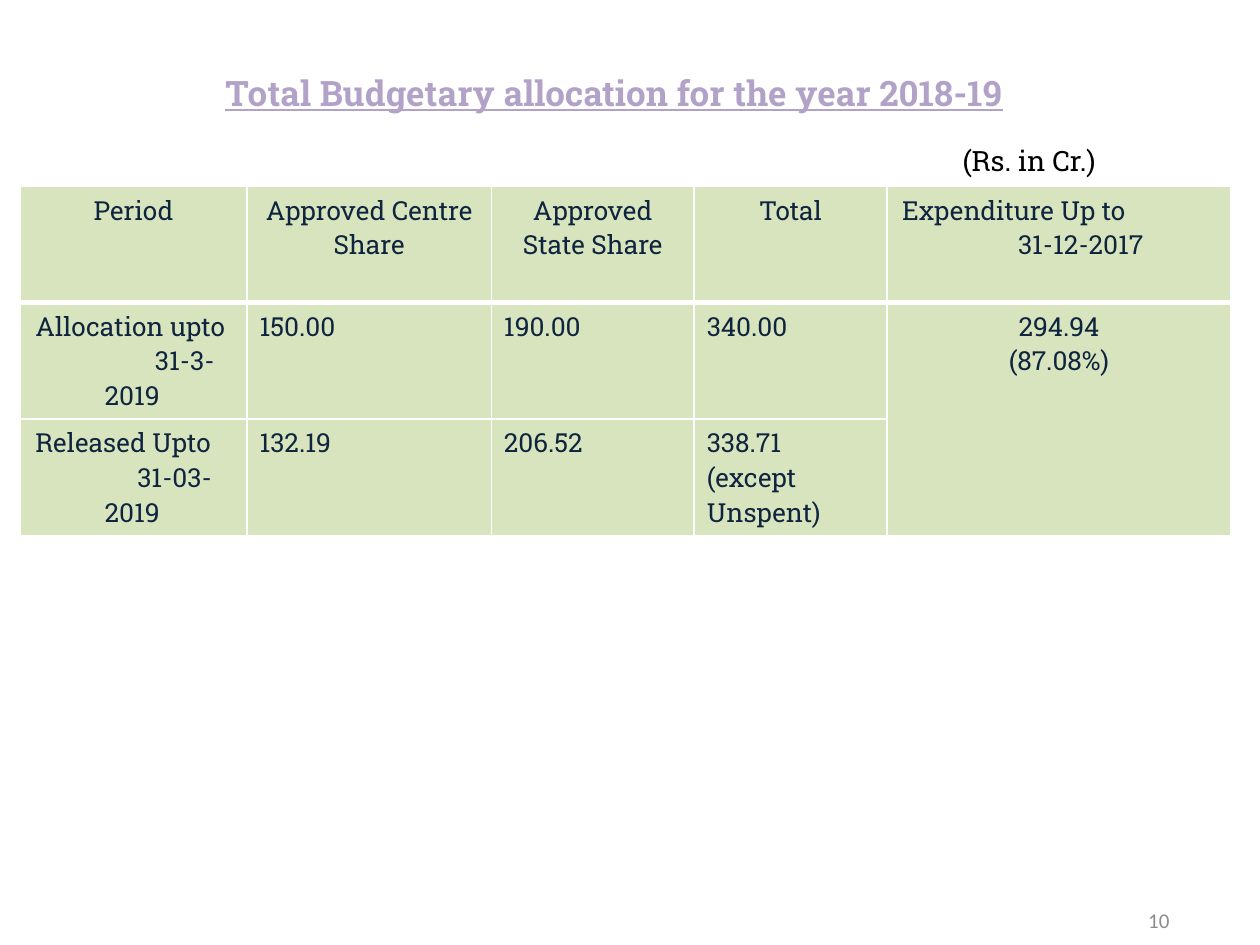
"""Build the budgetary allocation slide."""
from lxml import etree
from pptx import Presentation
from pptx import util as u
from pptx.dml.color import RGBColor
from pptx.enum import text
from pptx.oxml import ns

LILAC = RGBColor(0xB3, 0xA2, 0xC7)
GREEN = RGBColor(0xD7, 0xE4, 0xBD)
NAVY = RGBColor(0x0F, 0x24, 0x3E)
GREY = RGBColor(0x8C, 0x8C, 0x8C)
BLACK = RGBColor(0, 0, 0)
WHITE = RGBColor(0xFF, 0xFF, 0xFF)
SLAB = "Roboto Slab"
LEFT, CENTER, RIGHT = text.PP_ALIGN.LEFT, text.PP_ALIGN.CENTER, text.PP_ALIGN.RIGHT

TITLE = "Total Budgetary allocation for the year 2018-19"
UNIT = "(Rs. in Cr.)"
PAGE_NUMBER = "10"
COLUMNS = (1.8, 1.94, 1.61, 1.53, 2.73)
ROWS = (0.92, 0.92, 0.92)
CELLS = [
    [[("Period", CENTER)], [("Approved Centre Share", CENTER)],
     [("Approved State Share", CENTER)], [("Total", CENTER)],
     [("Expenditure Up to", LEFT, 0.02), ("31-12-2017", LEFT, 0.94)]],
    [[("Allocation upto", LEFT, 0.02), ("31-3-2019", LEFT, 0.57, 0.4)],
     [("150.00", LEFT)], [("190.00", LEFT)], [("340.00", LEFT)],
     [("294.94", CENTER), ("(87.08%)", CENTER)]],
    [[("Released Upto", LEFT, 0.02), ("31-03-2019", LEFT, 0.57, 0.26)],
     [("132.19", LEFT)], [("206.52", LEFT)], [("338.71 (except Unspent)", LEFT)]],
]


def write(para, words, size=15, color=NAVY, font=SLAB, align=LEFT,
          margin=0, indent=0, bold=False, underline=False):
    """Fill a paragraph with one formatted run."""
    para.alignment = align
    if margin:
        props = para._p.get_or_add_pPr()
        props.set("marL", str(u.Inches(margin)))
        props.set("indent", str(u.Inches(indent)))
    span = para.add_run()
    span.text = words
    span.font.size = u.Pt(size)
    span.font.name = font
    span.font.color.rgb = color
    span.font.bold = bold
    span.font.underline = underline


def add_label(slide, area, words, anchor=text.MSO_ANCHOR.TOP, inset=0.1, **style):
    """Add a wrapped text box with one paragraph."""
    box = slide.shapes.add_textbox(*map(u.Inches, area))
    frame = box.text_frame
    frame.word_wrap = True
    frame.vertical_anchor = anchor
    frame.margin_left = u.Inches(inset)
    write(frame.paragraphs[0], words, **style)


def set_borders(cell, top, bottom):
    """Draw white borders with the given top and bottom widths."""
    props = cell._tc.get_or_add_tcPr()
    for side, width in (("L", 1), ("R", 1), ("T", top), ("B", bottom)):
        line = etree.SubElement(props, ns.qn(f"a:ln{side}"), w=str(u.Pt(width)))
        fill = etree.SubElement(line, ns.qn("a:solidFill"))
        etree.SubElement(fill, ns.qn("a:srgbClr"), val=str(WHITE))


def add_budget_table(slide):
    """Add the allocation table with its merged expenditure cell."""
    frame = slide.shapes.add_table(
        len(ROWS), len(COLUMNS), u.Inches(0.16), u.Inches(1.48),
        u.Inches(sum(COLUMNS)), u.Inches(sum(ROWS)))
    table = frame.table
    table.first_row = table.horz_banding = False
    for column, width in zip(table.columns, COLUMNS):
        column.width = u.Inches(width)
    for row, height in zip(table.rows, ROWS):
        row.height = u.Inches(height)
    for r in range(len(ROWS)):
        for c in range(len(COLUMNS)):
            cell = table.cell(r, c)
            set_borders(cell, 3 if r == 1 else 1, 3 if r == 0 else 1)
            cell.fill.solid()
            cell.fill.fore_color.rgb = GREEN
    for r, row in enumerate(CELLS):
        for c, lines in enumerate(row):
            body = table.cell(r, c).text_frame
            for i, (words, align, *offsets) in enumerate(lines):
                para = body.add_paragraph() if i else body.paragraphs[0]
                margin, indent = (offsets + [0, 0])[:2]
                write(para, words, align=align, margin=margin, indent=indent)
    table.cell(1, 4).merge(table.cell(2, 4))


deck = Presentation()
deck.slide_width, deck.slide_height = u.Inches(10), u.Inches(7.5)
page = deck.slides.add_slide(deck.slide_layouts[5])

title = page.shapes.title
title.left, title.top, title.width, title.height = map(u.Inches, (-0.25, 0, 10.25, 2.02))
title.text_frame.vertical_anchor = text.MSO_ANCHOR.MIDDLE
title.text_frame.margin_bottom = u.Inches(0.6)
write(title.text_frame.paragraphs[0], TITLE, size=20, color=LILAC, align=CENTER,
      bold=True, underline=True)

add_budget_table(page)
add_label(page, (8.98, 7.1, 0.4, 0.4), PAGE_NUMBER, anchor=text.MSO_ANCHOR.MIDDLE,
          size=12, color=GREY, font="Calibri", align=RIGHT)
add_label(page, (7.05, 1.09, 2.43, 0.37), UNIT, inset=0.59, size=16, color=BLACK)

deck.save("out.pptx")
